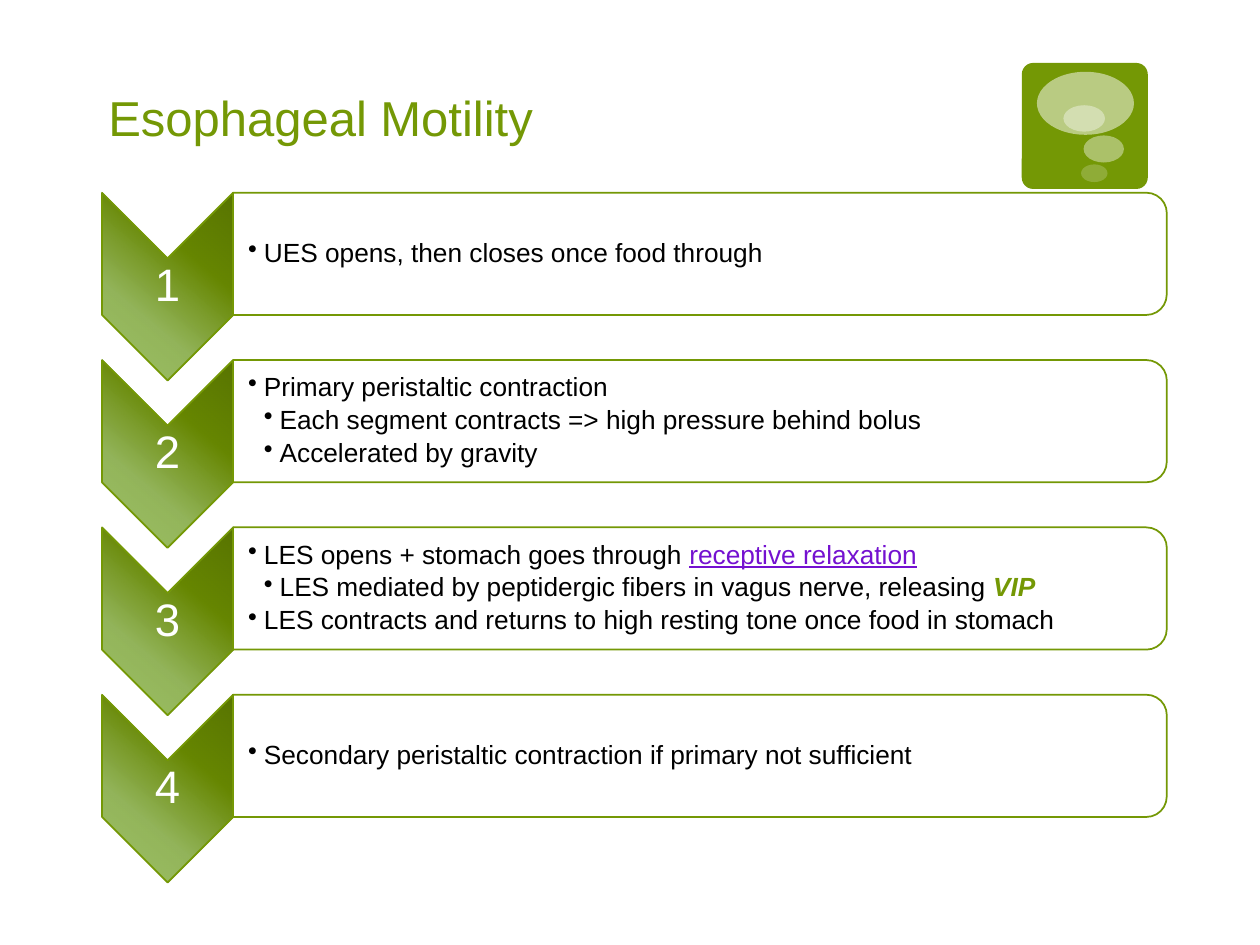
from dataclasses import dataclass
from typing import NamedTuple

from lxml.etree import SubElement as Sub
from pptx import Presentation
from pptx.dml.color import RGBColor as Rgb
from pptx.enum.shapes import MSO_SHAPE as Kind
from pptx.enum.text import MSO_ANCHOR as Anchor, PP_ALIGN as Align
from pptx.oxml.ns import qn
from pptx.util import Inches, Pt


@dataclass(frozen=True)
class Theme:
    font: str = "Arial"
    green: str = "749805"
    link: str = "7411D0"
    black: str = "000000"
    white: str = "FFFFFF"
    title: int = 28
    digit: int = 26
    body: int = 15
    # position, colour, opacity, all but the colour in percent
    fade: tuple = ((0, "8FB84C", 85), (33, "8EB153", 95),
                   (67, "668600", 100), (100, "587400", 100))


class Box(NamedTuple):
    """Place and size in columns and rows of the slide grid."""
    col: float
    row: float
    wide: float
    high: float

    def down(self, rows):
        return self._replace(row=self.row + rows)

    def turned(self):
        """The frame that fills this box once rotated by 90 degrees."""
        shift = (self.wide - self.high) / 2
        return Box(self.col + shift, self.row - shift, self.high, self.wide)

    def emu(self):
        return [Inches(n * CELL) for n in self]


class Run(NamedTuple):
    text: str
    color: str = Theme.black
    strong: bool = False
    under: bool = False


class Item(NamedTuple):
    level: int
    runs: tuple


CELL = 0.1
COLS, ROWS = 100, 75
THEME = Theme()

TITLE = Box(8.1, 2.5, 52.5, 9.7)
BADGE = Box(81.1, 5, 10, 10)
BUBBLES = (
    (Box(82.3, 5.7, 7.7, 5), 50),
    (Box(86, 10.75, 3.2, 2.15), 40),
    (Box(85.8, 13.05, 2.1, 1.4), 20),
    (Box(84.4, 8.35, 3.3, 2.1), 38),
)
PITCH = 13.28
ARROW = Box(8.1, 15.3, 10.4, 14.9)
DIGIT = Box(8.1, 20.5, 10.4, 4.5)
PANEL = Box(18.5, 15.3, 74.1, 9.7)
NOTES = Box(18.5, 15.8, 73.7, 8.7)
INDENT = 0.125

STEPS = (
    (Item(1, (Run("UES opens, then closes once food through"),)),),
    (
        Item(1, (Run("Primary peristaltic contraction"),)),
        Item(2, (Run("Each segment contracts => high pressure behind bolus"),)),
        Item(2, (Run("Accelerated by gravity"),)),
    ),
    (
        Item(1, (Run("LES opens + stomach goes through "),
                 Run("receptive relaxation", THEME.link, under=True))),
        Item(2, (Run("LES mediated by peptidergic fibers in vagus nerve, releasing "),
                 Run("VIP", THEME.green, strong=True))),
        Item(1, (Run("LES contracts and returns to high resting tone once food in stomach"),)),
    ),
    (Item(1, (Run("Secondary peristaltic contraction if primary not sufficient"),)),),
)


def add_shape(slide, kind: Kind, box: Box, color: str, alpha: int = 100, line: bool = False):
    shape = slide.shapes.add_shape(kind, *box.emu())
    shape.shadow.inherit = False
    shape.fill.solid()
    shape.fill.fore_color.rgb = Rgb.from_string(color)
    if alpha < 100:
        tint = shape._element.spPr.find(".//" + qn("a:srgbClr"))
        Sub(tint, qn("a:alpha"), val=str(alpha * 1000))
    if line:
        shape.line.color.rgb = Rgb.from_string(THEME.green)
        shape.line.width = Pt(1)
    else:
        shape.line.fill.background()
    return shape


def add_fade(shape, angle: int) -> None:
    """Replace the fill by the theme's gradient."""
    shape.fill.gradient()
    grad = shape._element.spPr.find(qn("a:gradFill"))
    for part in list(grad):
        grad.remove(part)
    grad.set("rotWithShape", "1")
    stops = Sub(grad, qn("a:gsLst"))
    for pos, color, alpha in THEME.fade:
        stop = Sub(stops, qn("a:gs"), pos=str(pos * 1000))
        tint = Sub(stop, qn("a:srgbClr"), val=color)
        Sub(tint, qn("a:alpha"), val=str(alpha * 1000))
    Sub(grad, qn("a:lin"), ang=str(angle * 60000), scaled="1")


def add_frame(slide, box: Box, anchor: Anchor, pads: tuple):
    frame = slide.shapes.add_textbox(*box.emu()).text_frame
    frame.word_wrap = True
    frame.vertical_anchor = anchor
    (frame.margin_left, frame.margin_top,
     frame.margin_right, frame.margin_bottom) = map(Inches, pads)
    return frame


def style(font, size: int, color: str) -> None:
    font.name = THEME.font
    font.size = Pt(size)
    font.color.rgb = Rgb.from_string(color)


def add_label(slide, text: str, box: Box, anchor: Anchor, pads: tuple,
              size: int, color: str, align: Align) -> None:
    frame = add_frame(slide, box, anchor, pads)
    frame.text = text
    para = frame.paragraphs[0]
    para.alignment = align
    para.line_spacing = 0.9
    style(para.runs[0].font, size, color)


def add_notes(slide, items: tuple, box: Box) -> None:
    frame = add_frame(slide, box, Anchor.MIDDLE, (0.12, 0.01, 0.01, 0.01))
    for i, item in enumerate(items):
        para = frame.add_paragraph() if i else frame.paragraphs[0]
        para.level = item.level
        para.line_spacing = 0.9
        para.space_after = Pt(2.6)
        props = para._p.get_or_add_pPr()
        props.set("marL", str(Inches(INDENT * item.level)))
        props.set("indent", str(-Inches(INDENT)))
        Sub(props, qn("a:buChar"), char="•")
        for part in item.runs:
            run = para.add_run()
            run.text = part.text
            style(run.font, THEME.body, part.color)
            run.font.bold = run.font.italic = part.strong
            run.font.underline = part.under


def add_step(slide, index: int, items: tuple) -> None:
    drop = index * PITCH
    arrow = add_shape(slide, Kind.CHEVRON, ARROW.down(drop).turned(), THEME.green, line=True)
    arrow.rotation = 90
    add_fade(arrow, 220)
    add_label(slide, str(index + 1), DIGIT.down(drop), Anchor.MIDDLE, (0.02,) * 4,
              THEME.digit, THEME.white, Align.CENTER)
    panel = add_shape(slide, Kind.ROUND_2_SAME_RECTANGLE, PANEL.down(drop).turned(),
                      THEME.white, 90, line=True)
    panel.rotation = 90
    add_notes(slide, items, NOTES.down(drop))


def main() -> None:
    deck = Presentation()
    deck.slide_width, deck.slide_height = Inches(COLS * CELL), Inches(ROWS * CELL)
    slide = deck.slides.add_slide(deck.slide_layouts[6])
    badge = add_shape(slide, Kind.ROUNDED_RECTANGLE, BADGE, THEME.green)
    badge.adjustments[0] = 0.09
    for box, alpha in BUBBLES:
        add_shape(slide, Kind.OVAL, box, THEME.white, alpha)
    add_label(slide, "Esophageal Motility", TITLE, Anchor.BOTTOM, (0.05, 0.05, 0.1, 0.05),
              THEME.title, THEME.green, Align.LEFT)
    for index, items in enumerate(STEPS):
        add_step(slide, index, items)
    deck.save("out.pptx")


if __name__ == "__main__":
    main()
